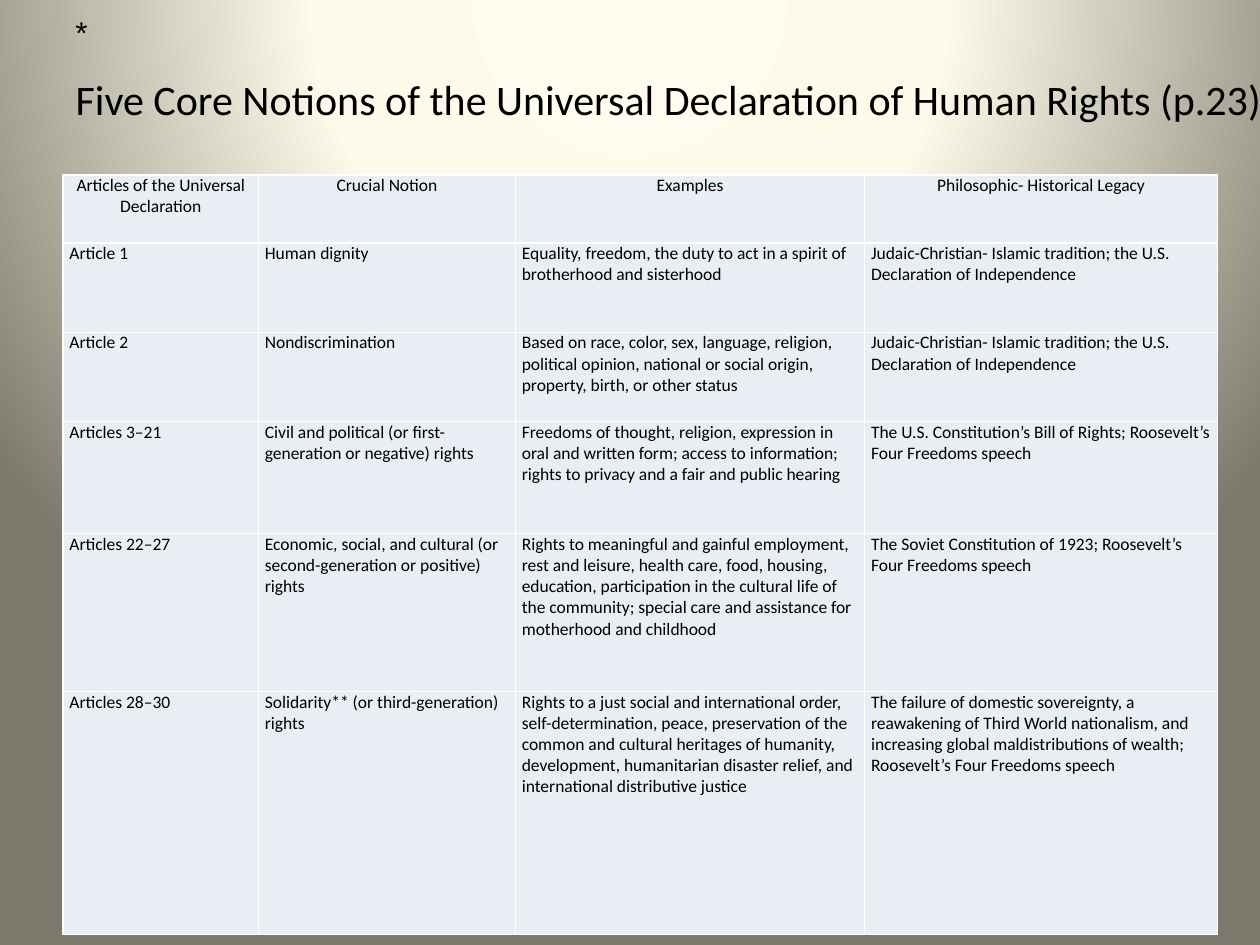
"""Build the slide on the core notions of the Universal Declaration."""
from lxml import etree
from pptx import Presentation
from pptx.dml.color import RGBColor
from pptx.enum.text import MSO_ANCHOR, MSO_AUTO_SIZE, PP_ALIGN
from pptx.oxml import parse_xml
from pptx.oxml.ns import nsdecls, qn
from pptx.util import Cm, Pt

LEFT, CENTER = PP_ALIGN.LEFT, PP_ALIGN.CENTER
TOP, MIDDLE = MSO_ANCHOR.TOP, MSO_ANCHOR.MIDDLE
GROW = MSO_AUTO_SIZE.SHAPE_TO_FIT_TEXT
TITLE_ONLY = 5

HEADINGS = ("Articles of the Universal Declaration", "Crucial Notion",
            "Examples", "Philosophic- Historical Legacy")
DIGNITY_LEGACY = ("Judaic-Christian- Islamic tradition; the U.S. "
                  "Declaration of Independence")
NOTIONS = (
    ("Article 1", "Human dignity",
     "Equality, freedom, the duty to act in a spirit of brotherhood and "
     "sisterhood", DIGNITY_LEGACY),
    ("Article 2", "Nondiscrimination",
     "Based on race, color, sex, language, religion, political opinion, "
     "national or social origin, property, birth, or other status",
     DIGNITY_LEGACY),
    ("Articles 3–21",
     "Civil and political (or first-generation or negative) rights",
     "Freedoms of thought, religion, expression in oral and written form; "
     "access to information; rights to privacy and a fair and public hearing",
     "The U.S. Constitution’s Bill of Rights; Roosevelt’s Four Freedoms "
     "speech"),
    ("Articles 22–27",
     "Economic, social, and cultural (or second-generation or positive) "
     "rights",
     "Rights to meaningful and gainful employment, rest and leisure, health "
     "care, food, housing, education, participation in the cultural life of "
     "the community; special care and assistance for motherhood and childhood",
     "The Soviet Constitution of 1923; Roosevelt’s Four Freedoms speech"),
    ("Articles 28–30", "Solidarity** (or third-generation) rights",
     "Rights to a just social and international order, self-determination, "
     "peace, preservation of the common and cultural heritages of humanity, "
     "development, humanitarian disaster relief, and international "
     "distributive justice",
     "The failure of domestic sovereignty, a reawakening of Third World "
     "nationalism, and increasing global maldistributions of wealth; "
     "Roosevelt’s Four Freedoms speech"),
)
COLUMN_WIDTHS = (3.94, 5.18, 7.04, 7.11)
ROW_HEIGHTS = (1.37, 1.8, 1.8, 2.26, 3.18, 4.9)


def color(value):
    return RGBColor.from_string(value)


class SlideBuilder:
    ink, cell_fill, border = "000000", "E9EDF4", "FFFFFF"
    body_font, mark_font = "Calibri", "Arial"

    def __init__(self, slide):
        self.slide = slide

    def set_text(self, frame, text, size, font, align=LEFT):
        frame.text = text
        paragraph = frame.paragraphs[0]
        paragraph.alignment = align
        for run in paragraph.runs:
            run.font.size, run.font.name = Pt(size), font
            run.font.bold = False
            run.font.color.rgb = color(self.ink)

    def background(self, stops, focus):
        self.slide.background.fill.solid()
        properties = next(self.slide.element.iter(qn("p:bgPr")))
        stop_xml = "".join(
            f'<a:gs pos="{percent * 1000}"><a:srgbClr val="{value}"/></a:gs>'
            for percent, value in stops)
        sides = " ".join(f'{side}="{percent * 1000}"'
                         for side, percent in zip("ltrb", focus))
        gradient = parse_xml(
            f'<a:gradFill {nsdecls("a")} rotWithShape="1">'
            f'<a:gsLst>{stop_xml}</a:gsLst>'
            f'<a:path path="circle"><a:fillToRect {sides}/></a:path>'
            '</a:gradFill>')
        properties.replace(properties.find(qn("a:solidFill")), gradient)

    def title(self, text, left, top, width, height):
        heading = self.slide.shapes.title
        heading.left, heading.top = Cm(left), Cm(top)
        heading.width, heading.height = Cm(width), Cm(height)
        frame = heading.text_frame
        self.set_text(frame, text, 24, self.body_font)
        frame.word_wrap, frame.auto_size = True, GROW
        frame.vertical_anchor = TOP

    def mark(self, text, left, top, width, height):
        box = self.slide.shapes.add_textbox(
            Cm(left), Cm(top), Cm(width), Cm(height))
        frame = box.text_frame
        self.set_text(frame, text, 18, self.mark_font)
        frame.word_wrap, frame.auto_size = False, GROW
        frame.vertical_anchor = MIDDLE

    def outline(self, cell):
        properties = cell._tc.get_or_add_tcPr()
        for side in ("a:lnL", "a:lnR", "a:lnT", "a:lnB"):
            line = etree.SubElement(properties, qn(side), w=str(Pt(1)))
            fill = etree.SubElement(line, qn("a:solidFill"))
            etree.SubElement(fill, qn("a:srgbClr"), val=self.border)

    def cell(self, cell, text, align):
        self.set_text(cell.text_frame, text, 10, self.body_font, align)
        cell.margin_left = cell.margin_right = Cm(0.13)
        cell.margin_top = cell.margin_bottom = 0
        cell.vertical_anchor = TOP
        self.outline(cell)
        cell.fill.solid()
        cell.fill.fore_color.rgb = color(self.cell_fill)

    def table(self, rows, widths, heights, left, top):
        table = self.slide.shapes.add_table(
            len(rows), len(widths), Cm(left), Cm(top),
            Cm(sum(widths)), Cm(sum(heights))).table
        table.first_row = table.horz_banding = False
        for column, width in zip(table.columns, widths):
            column.width = Cm(width)
        for index, (row, height) in enumerate(zip(table.rows, heights)):
            row.height = Cm(height)
            for cell, text in zip(row.cells, rows[index]):
                self.cell(cell, text, LEFT if index else CENTER)


def main():
    presentation = Presentation()
    presentation.slide_width, presentation.slide_height = Cm(25.4), Cm(19.05)
    layout = presentation.slide_layouts[TITLE_ONLY]
    builder = SlideBuilder(presentation.slides.add_slide(layout))
    builder.background(((0, "FEFCEE"), (40, "FDFAEA"), (100, "7B796B")),
                       (50, -80, 50, 180))
    builder.table((HEADINGS,) + NOTIONS, COLUMN_WIDTHS, ROW_HEIGHTS,
                  1.27, 3.53)
    builder.mark("\t*", 0, 0.13, 3.33, 1.02)
    builder.title("Five Core Notions of the Universal Declaration of "
                  "Human Rights (p.23)", 1.27, 1.35, 27.41, 1.27)
    presentation.save("out.pptx")


if __name__ == "__main__":
    main()
